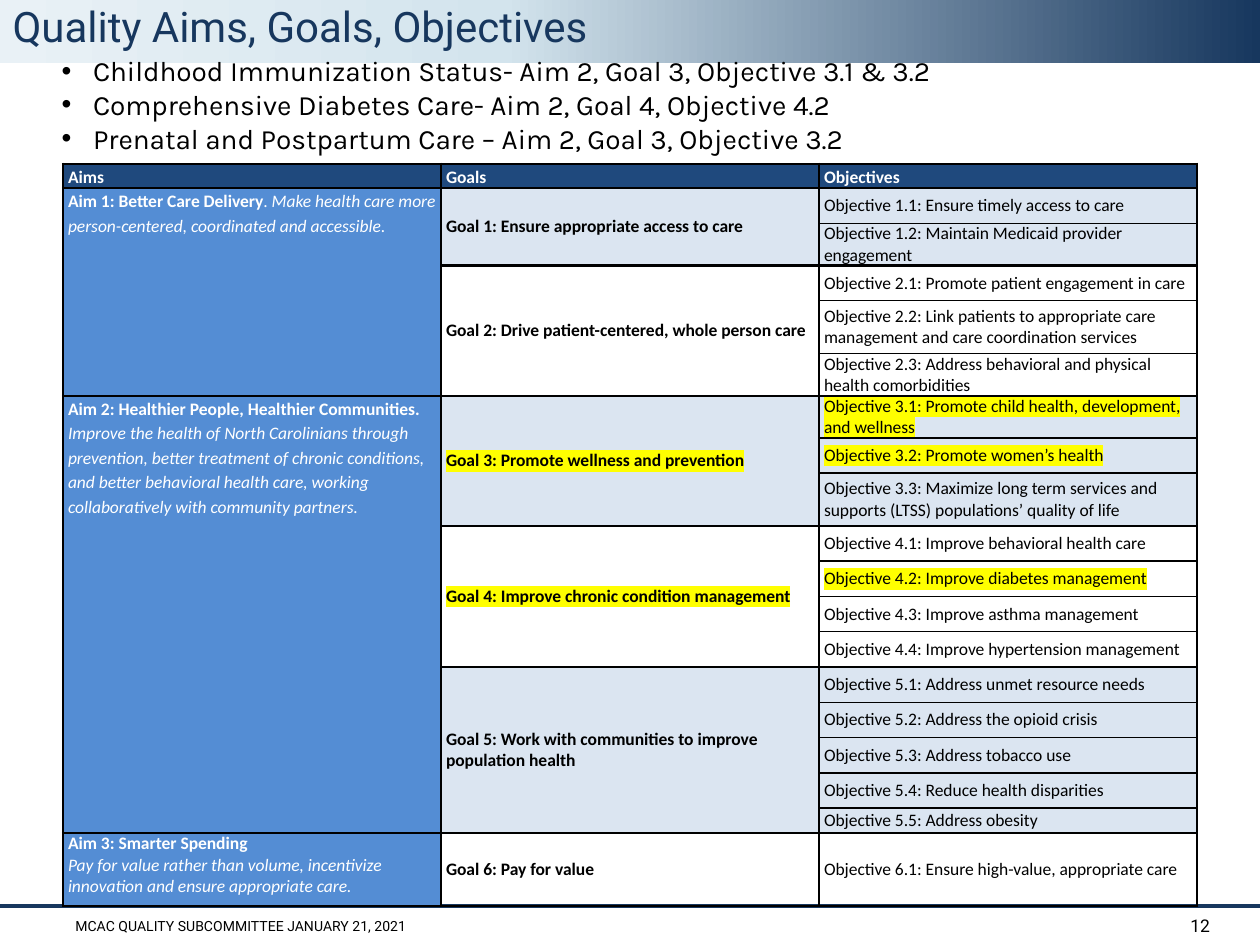
from copy import deepcopy
from pptx import Presentation
from pptx.dml.color import RGBColor
from pptx.enum.shapes import MSO_CONNECTOR, MSO_SHAPE
from pptx.enum.text import MSO_ANCHOR as ANCHOR, MSO_AUTO_SIZE, PP_ALIGN as ALIGN
from pptx.oxml.ns import qn
from pptx.util import Inches, Pt
from lxml.etree import SubElement

# Content
TITLE = "Quality Aims, Goals, Objectives"
MEASURES = [
    "Childhood Immunization Status- Aim 2, Goal 3, Objective 3.1 & 3.2",
    "Comprehensive Diabetes Care- Aim 2, Goal 4, Objective 4.2",
    "Prenatal and Postpartum Care – Aim 2, Goal 3, Objective 3.2",
]
FOOTER, PAGE = "MCAC QUALITY SUBCOMMITTEE JANUARY 21, 2021", "12"
HEADERS = ["Aims", "Goals", "Objectives"]
# Aim: (name, description, goals); goal: (name, [(objective, row height)])
AIMS = [
    ("Aim 1: Better Care Delivery",
     ". Make health care more person-centered, coordinated and accessible.", [
         ("Goal 1: Ensure appropriate access to care", [
             ("Objective 1.1: Ensure timely access to care", 0.28),
             ("Objective 1.2: Maintain Medicaid provider engagement", 0.28)]),
         ("Goal 2: Drive patient-centered, whole person care", [
             ("Objective 2.1: Promote patient engagement in care", 0.28),
             ("Objective 2.2: Link patients to appropriate care management "
              "and care coordination services", 0.42),
             ("Objective 2.3: Address behavioral and physical health comorbidities", 0.3)]),
     ]),
    ("Aim 2: Healthier People, Healthier Communities. ",
     "Improve the health of North Carolinians through prevention, better treatment of "
     "chronic conditions, and better behavioral health care, working collaboratively "
     "with community partners.", [
         ("Goal 3: Promote wellness and prevention", [
             ("Objective 3.1: Promote child health, development, and wellness", 0.3),
             ("Objective 3.2: Promote women’s health", 0.28),
             ("Objective 3.3: Maximize long term services and supports (LTSS) "
              "populations’ quality of life", 0.42)]),
         ("Goal 4: Improve chronic condition management", [
             ("Objective 4.1: Improve behavioral health care", 0.28),
             ("Objective 4.2: Improve diabetes management", 0.28),
             ("Objective 4.3: Improve asthma management", 0.28),
             ("Objective 4.4: Improve hypertension management", 0.28)]),
         ("Goal 5: Work with communities to improve population health", [
             ("Objective 5.1: Address unmet resource needs", 0.28),
             ("Objective 5.2: Address the opioid crisis", 0.28),
             ("Objective 5.3: Address tobacco use", 0.28),
             ("Objective 5.4: Reduce health disparities", 0.28),
             ("Objective 5.5: Address obesity", 0.2)]),
     ]),
    ("Aim 3: Smarter Spending",
     "Pay for value rather than volume, incentivize innovation and ensure "
     "appropriate care.", [
         ("Goal 6: Pay for value", [
             ("Objective 6.1: Ensure high-value, appropriate care", 0.58)]),
     ]),
]
HIGHLIGHTED = ("Goal 3", "Goal 4", "Objective 3.1", "Objective 3.2", "Objective 4.2")

NAVY, BLACK, WHITE, YELLOW = "17375E", "000000", "FFFFFF", "FFFF00"
HEADER_BLUE, AIM_BLUE, PALE_BLUE = "1F497D", "548DD4", "DBE5F1"
BAND = [(0, "E9F1F6"), (0.4, "D3E4ED"), (1, NAVY)]
HEADER_HEIGHT = 0.17
THIN, THICK = 1, 1.5


def color(value):
    return RGBColor.from_string(value)


def add_run(paragraph, text, size, face, ink, **style):
    run = paragraph.add_run()
    run.text = text
    for name, value in {"size": Pt(size), "name": face, **style}.items():
        setattr(run.font, name, value)
    run.font.color.rgb = color(ink)
    return run


def add_text_box(slide, box, lines, size, face, anchor, align=ALIGN.LEFT):
    frame = slide.shapes.add_textbox(*map(Inches, box)).text_frame
    frame.word_wrap, frame.vertical_anchor = True, anchor
    for i, line in enumerate(lines):
        paragraph = frame.add_paragraph() if i else frame.paragraphs[0]
        paragraph.alignment = align
        add_run(paragraph, line, size, face, BLACK)
    return frame


def style_cell(cell, fill, anchor, left=THIN, right=THIN, top=THICK, bottom=THICK):
    margins = {"margin_left": 0.04, "margin_right": 0.04, "margin_top": 0, "margin_bottom": 0}
    for name, value in margins.items():
        setattr(cell, name, Inches(value))
    cell.vertical_anchor = anchor
    properties = cell._tc.get_or_add_tcPr()
    for side, width in zip("LRTB", (left, right, top, bottom)):
        line = SubElement(properties, qn(f"a:ln{side}"), w=str(Pt(width)))
        SubElement(SubElement(line, qn("a:solidFill")), qn("a:srgbClr"), val=BLACK)
    if fill:
        cell.fill.solid()
        cell.fill.fore_color.rgb = color(fill)
    else:
        cell.fill.background()


def write_cell(cell, text, ink=BLACK, bold=False):
    run = add_run(cell.text_frame.paragraphs[0], text, 10, "Calibri", ink, bold=bold)
    if text.split(":")[0] in HIGHLIGHTED:
        properties = run.font._element
        mark = SubElement(properties, qn("a:highlight"))
        SubElement(mark, qn("a:srgbClr"), val=YELLOW)
        properties.find(qn("a:latin")).addprevious(mark)


def write_aim(cell, name, description):
    paragraph = cell.text_frame.paragraphs[0]
    add_run(paragraph, name, 10, "Calibri", WHITE, bold=True)
    if name.startswith("Aim 3"):
        paragraph.add_line_break()
    else:
        paragraph.line_spacing = 1.15
    if description.startswith("."):
        add_run(paragraph, ".", 10, "Calibri", WHITE, bold=False)
        description = description[1:]
    add_run(paragraph, description, 10, "Calibri", WHITE, bold=False, italic=True)


def merge_down(table, column, first, last):
    if last > first:
        table.cell(first, column).merge(table.cell(last, column))


def add_aims_table(slide):
    heights = [HEADER_HEIGHT] + [height for _, _, goals in AIMS
                                 for _, objectives in goals for _, height in objectives]
    box = map(Inches, (0.5, 1.3, 9, sum(heights)))
    table = slide.shapes.add_table(len(heights), len(HEADERS), *box).table
    table.first_row = table.horz_banding = False
    for row, height in zip(table.rows, heights):
        row.height = Inches(height)

    for column, header in enumerate(HEADERS):
        cell = table.cell(0, column)
        style_cell(cell, HEADER_BLUE, ANCHOR.MIDDLE if column else ANCHOR.TOP,
                   left=THIN if column else THICK, right=THICK if column == 2 else THIN)
        write_cell(cell, header, WHITE, bold=True)
        cell.text_frame.paragraphs[0].line_spacing = 1.15

    row = goal_count = 0
    for aim, description, goals in AIMS:
        aim_row = row + 1
        for goal, objectives in goals:
            goal_row = row + 1
            goal_count += 1
            fill = PALE_BLUE if goal_count % 2 else None
            for i, (objective, _) in enumerate(objectives):
                row += 1
                style_cell(table.cell(row, 0), AIM_BLUE, ANCHOR.TOP, left=THICK)
                style_cell(table.cell(row, 1), fill, ANCHOR.MIDDLE)
                style_cell(table.cell(row, 2), fill, ANCHOR.MIDDLE, right=THICK,
                           top=THIN if i else THICK,
                           bottom=THICK if i == len(objectives) - 1 else THIN)
                write_cell(table.cell(row, 2), objective)
            merge_down(table, 1, goal_row, row)
            write_cell(table.cell(goal_row, 1), goal, bold=True)
        merge_down(table, 0, aim_row, row)
        write_aim(table.cell(aim_row, 0), aim, description)


def main():
    deck = Presentation()
    deck.slide_width, deck.slide_height = Inches(10), Inches(7.5)
    slide = deck.slides.add_slide(deck.slide_layouts[5])
    title = slide.shapes.title

    # Title band, placed behind the title
    band = slide.shapes.add_shape(MSO_SHAPE.RECTANGLE, 0, 0, deck.slide_width, Inches(0.5))
    band.shadow.inherit = False
    band.line.fill.background()
    band.fill.gradient()
    band.fill.gradient_angle = 0
    first_stop = band.fill._xPr.find(qn("a:gradFill")).find(qn("a:gsLst"))[0]
    first_stop.addnext(deepcopy(first_stop))
    for stop, (position, shade) in zip(band.fill.gradient_stops, BAND):
        stop.position, stop.color.rgb = position, color(shade)
    title._element.addprevious(band._element)

    # Footer rule
    rule = slide.shapes.add_connector(MSO_CONNECTOR.STRAIGHT, 0, Inches(7.19),
                                      deck.slide_width, Inches(7.19))
    rule.line.color.rgb, rule.line.width = color(NAVY), Pt(2.25)
    SubElement(rule._element.spPr, qn("a:effectLst"))

    # Title
    title.left, title.top, title.width, title.height = map(Inches, (0, 0, 9, 0.6))
    frame = title.text_frame
    frame.vertical_anchor, frame.auto_size = ANCHOR.TOP, MSO_AUTO_SIZE.NONE
    heading = frame.paragraphs[0]
    heading.alignment, heading.line_spacing = ALIGN.LEFT, 0.9
    add_run(heading, TITLE, 24, "Roboto", NAVY)

    # Bulleted measures
    measures = add_text_box(slide, (0.39, 0.38, 9, 0.6), MEASURES, 16, "Karla", ANCHOR.TOP)
    for paragraph in measures.paragraphs:
        properties = paragraph._p.get_or_add_pPr()
        properties.set("marL", str(Inches(0.25)))
        properties.set("indent", str(-Inches(0.25)))
        SubElement(properties, qn("a:buFont"), typeface="Arial")
        SubElement(properties, qn("a:buChar"), char="•")

    # Footer and table
    add_text_box(slide, (0.5, 7.19, 8.4, 0.31), [FOOTER], 8, "Roboto", ANCHOR.MIDDLE)
    add_text_box(slide, (9.08, 7.19, 0.62, 0.31), [PAGE], 10, "Roboto", ANCHOR.MIDDLE, ALIGN.RIGHT)
    add_aims_table(slide)
    deck.save("out.pptx")


if __name__ == "__main__":
    main()
